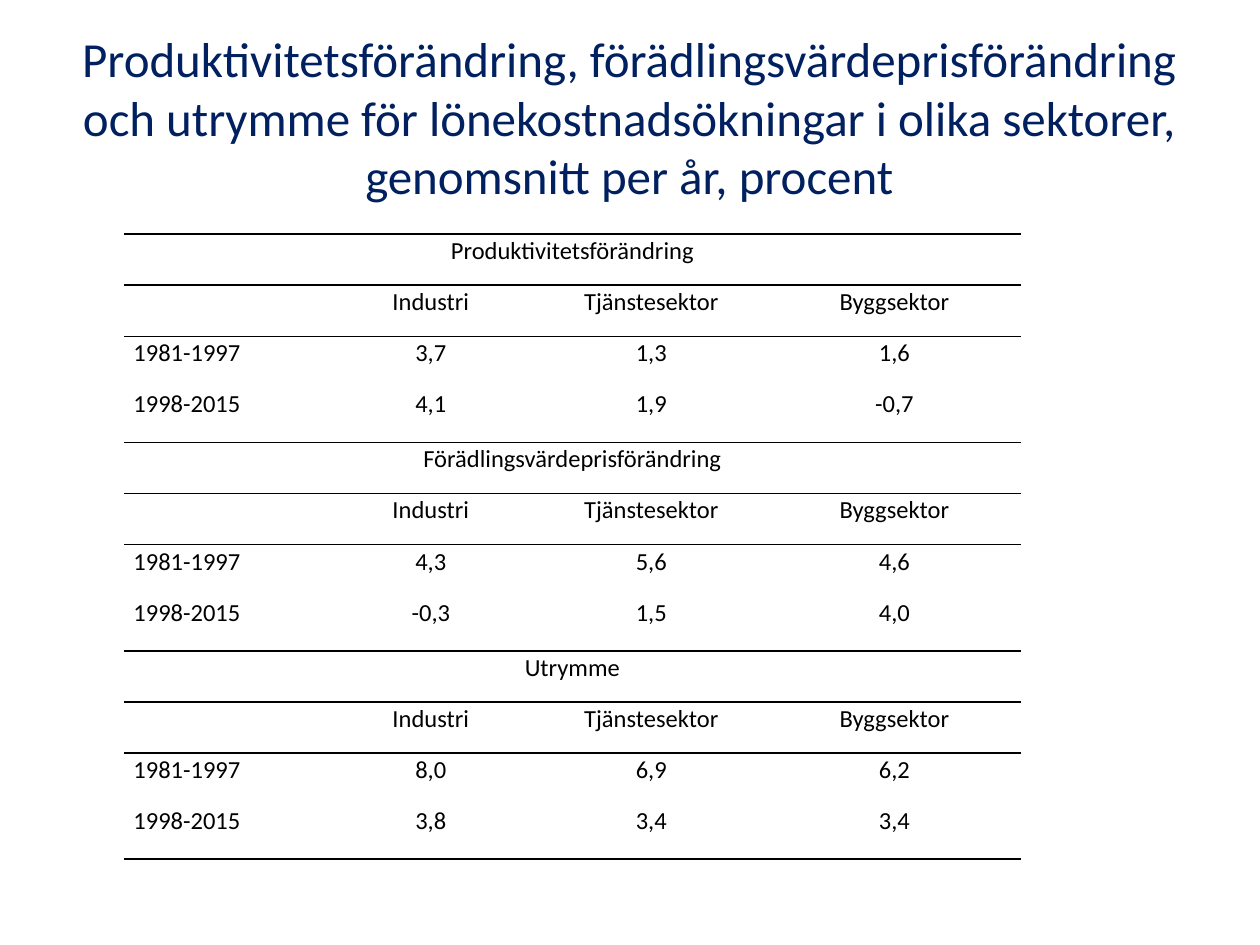
from lxml import etree
from pptx import Presentation
from pptx.dml.color import RGBColor
from pptx.enum.text import MSO_ANCHOR, PP_ALIGN
from pptx.oxml.ns import qn
from pptx.util import Cm, Pt

LEFT, CENTER = PP_ALIGN.LEFT, PP_ALIGN.CENTER
MIDDLE = MSO_ANCHOR.MIDDLE
FONT = "Calibri"
NAVY, BLACK = "002060", "000000"
PLAIN_STYLE = "{2D5ABB26-0587-4C30-8999-92F81FD0307C}"

TITLE = ("Produktivitetsförändring, förädlingsvärdeprisförändring och utrymme "
         "för lönekostnadsökningar i olika sektorer, genomsnitt per år, procent")
SECTORS = ["", "Industri", "Tjänstesektor", "Byggsektor"]
PERIODS = ["1981-1997", "1998-2015"]
SECTIONS = [
    ("Produktivitetsförändring", [["3,7", "1,3", "1,6"], ["4,1", "1,9", "-0,7"]]),
    ("Förädlingsvärdeprisförändring", [["4,3", "5,6", "4,6"], ["-0,3", "1,5", "4,0"]]),
    ("Utrymme", [["8,0", "6,9", "6,2"], ["3,8", "3,4", "3,4"]]),
]
COLUMN_WIDTHS = [4.09, 4.19, 4.7, 5.1]
SECTION_HEIGHTS = [1.03, 1.03, 1.03, 1.11]
SECTION_BORDERS = [("a:lnT", "a:lnB"), ("a:lnT",), (), ("a:lnB",)]

CELL_FORMAT = {"margin_left": Cm(0.19), "margin_right": Cm(0.19),
               "margin_top": 0, "margin_bottom": 0}
CELL_PARA = {"line_spacing": 1.07, "space_after": Pt(8)}
TITLE_FORMAT = {"word_wrap": True, "vertical_anchor": MIDDLE}


def color(value):
    return RGBColor.from_string(value)


def apply_format(target, values):
    for name, value in values.items():
        setattr(target, name, value)


def write_text(para, text, size, hex_color, align):
    para.alignment = align
    apply_format(para.font, {"size": Pt(size), "name": FONT})
    if text:
        span = para.add_run()
        span.text = text
        apply_format(span.font, {"size": Pt(size), "name": FONT})
        span.font.color.rgb = color(hex_color)


def add_title(page):
    box = page.shapes.add_textbox(Cm(1.27), Cm(0.76), Cm(22.83), Cm(3.18))
    apply_format(box.text_frame, TITLE_FORMAT)
    write_text(box.text_frame.paragraphs[0], TITLE, 28, NAVY, CENTER)


def add_border(cell, side):
    line = etree.SubElement(cell._tc.get_or_add_tcPr(), qn(side), w=str(Pt(1)))
    fill = etree.SubElement(line, qn("a:solidFill"))
    etree.SubElement(fill, qn("a:srgbClr"), val=BLACK)


def fill_cell(cell, text, align, borders):
    for side in borders:
        add_border(cell, side)
    cell.fill.background()
    apply_format(cell, CELL_FORMAT)
    para = cell.text_frame.paragraphs[0]
    apply_format(para, CELL_PARA)
    write_text(para, text, 14, BLACK, align)


def section_rows(heading, values):
    periods = [[period, *numbers] for period, numbers in zip(PERIODS, values)]
    return [[heading, "", "", ""], SECTORS, *periods]


def add_sector_table(page):
    rows = [row for section in SECTIONS for row in section_rows(*section)]
    section_size = len(SECTION_HEIGHTS)
    frame = page.shapes.add_table(len(rows), len(COLUMN_WIDTHS), Cm(2.5), Cm(4.72),
                                  Cm(sum(COLUMN_WIDTHS)),
                                  Cm(sum(SECTION_HEIGHTS) * len(SECTIONS)))
    table = frame.table
    apply_format(table, {"first_row": False, "horz_banding": False})
    table._tbl.tblPr.find(qn("a:tableStyleId")).text = PLAIN_STYLE
    for column, width in zip(table.columns, COLUMN_WIDTHS):
        column.width = Cm(width)
    for row_index, texts in enumerate(rows):
        place = row_index % section_size
        table.rows[row_index].height = Cm(SECTION_HEIGHTS[place])
        for column_index, text in enumerate(texts):
            align = LEFT if column_index == 0 and place > 0 else CENTER
            fill_cell(table.cell(row_index, column_index), text, align,
                      SECTION_BORDERS[place])
        if place == 0:
            table.cell(row_index, 0).merge(table.cell(row_index, len(texts) - 1))


def main():
    deck = Presentation()
    apply_format(deck, {"slide_width": Cm(25.4), "slide_height": Cm(19.05)})
    page = deck.slides.add_slide(deck.slide_layouts[6])
    add_title(page)
    add_sector_table(page)
    deck.save("out.pptx")


if __name__ == "__main__":
    main()
